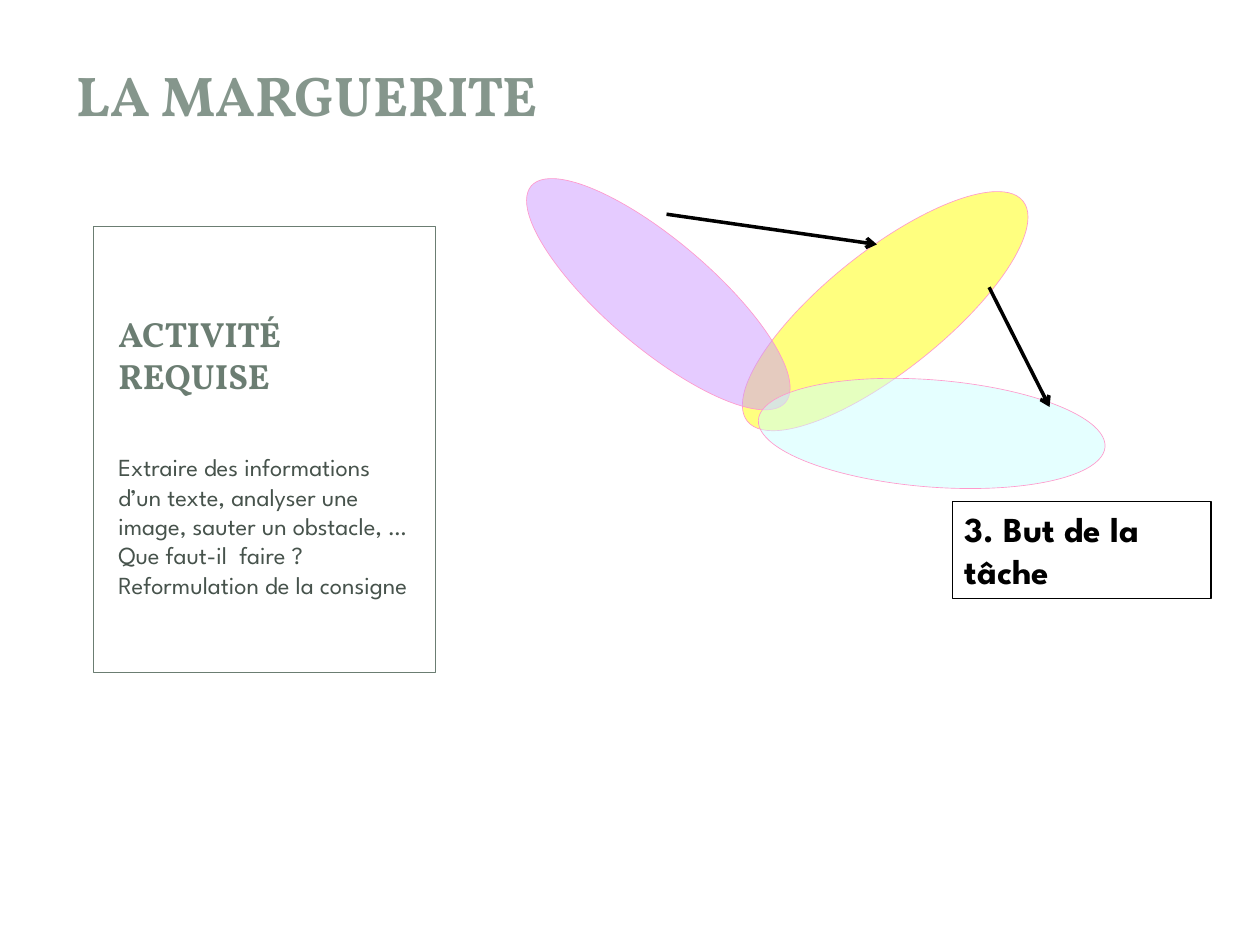
from dataclasses import dataclass

from lxml.etree import SubElement
from pptx import Presentation
from pptx.dml.color import RGBColor
from pptx.enum.shapes import MSO_CONNECTOR, MSO_SHAPE
from pptx.enum.text import MSO_ANCHOR, PP_ALIGN
from pptx.oxml.ns import qn
from pptx.shapes.autoshape import Shape
from pptx.util import Inches, Pt


@dataclass(frozen=True)
class Theme:
    serif: str = "Vollkorn"
    sans: str = "League Spartan"
    title: str = "85968C"
    head: str = "6B7D72"
    body: str = "47534C"
    black: str = "000000"
    white: str = "FFFFFF"
    rim: str = "FF99CC"
    big: int = 32
    mid: int = 20
    small: int = 14


@dataclass(frozen=True)
class Box:
    left: float
    top: float
    width: float
    height: float


@dataclass(frozen=True)
class Petal:
    box: Box
    turn: float
    fill: str


@dataclass(frozen=True)
class Arrow:
    start: tuple[float, float]
    end: tuple[float, float]


@dataclass(frozen=True)
class Style:
    font: str
    size: int
    color: str
    bold: bool = True
    lead: float | None = None


THEME = Theme()
PETALS = [
    Petal(Box(6.55, 1.07, 0.95, 2.8), 51.4, "FFFF00"),
    Petal(Box(4.8, 1.01, 0.85, 2.65), 310.4, "CC99FF"),
    Petal(Box(6.97, 2.06, 0.85, 2.76), 274.5, "CCFFFF"),
]
ARROWS = [
    Arrow((5.29, 1.7), (6.96, 1.94)),
    Arrow((7.85, 2.28), (8.33, 3.23)),
]


def place(box: Box) -> list[Inches]:
    return [Inches(n) for n in (box.left, box.top, box.width, box.height)]


def add_form(slide, kind: MSO_SHAPE, box: Box, line: str, width: float,
             fill: str | None = None) -> Shape:
    form = slide.shapes.add_shape(kind, *place(box))
    form.shadow.inherit = False
    if fill:
        form.fill.solid()
        form.fill.fore_color.rgb = RGBColor.from_string(fill)
    else:
        form.fill.background()
    form.line.color.rgb = RGBColor.from_string(line)
    form.line.width = Pt(width)
    return form


def write(form: Shape, text: str, style: Style,
          anchor: MSO_ANCHOR = MSO_ANCHOR.TOP) -> None:
    frame = form.text_frame
    frame.word_wrap = True
    frame.vertical_anchor = anchor
    para = frame.paragraphs[0]
    para.alignment = PP_ALIGN.LEFT
    if style.lead:
        para.line_spacing = Pt(style.lead)
    run = para.add_run()
    run.text = text
    run.font.name = style.font
    run.font.size = Pt(style.size)
    run.font.bold = style.bold
    run.font.color.rgb = RGBColor.from_string(style.color)


def add_text(slide, box: Box, text: str, style: Style,
             anchor: MSO_ANCHOR = MSO_ANCHOR.TOP) -> None:
    write(slide.shapes.add_textbox(*place(box)), text, style, anchor)


def add_petal(slide, petal: Petal) -> None:
    form = add_form(slide, MSO_SHAPE.OVAL, petal.box, THEME.rim, 0.37, petal.fill)
    form.rotation = petal.turn
    color = form.fill._xPr.find(qn("a:solidFill"))[0]
    SubElement(color, qn("a:alpha"), val="50000")


def add_arrow(slide, arrow: Arrow) -> None:
    ends = [Inches(n) for n in (*arrow.start, *arrow.end)]
    link = slide.shapes.add_connector(MSO_CONNECTOR.STRAIGHT, *ends)
    link.line.color.rgb = RGBColor.from_string(THEME.black)
    link.line.width = Pt(2)
    SubElement(link.line._get_or_add_ln(), qn("a:tailEnd"), type="arrow")
    SubElement(link._element.spPr, qn("a:effectLst"))


def main() -> None:
    deck = Presentation()
    deck.slide_width, deck.slide_height = Inches(10), Inches(7.5)
    slide = deck.slides.add_slide(deck.slide_layouts[6])

    # Card with the required activity
    add_form(slide, MSO_SHAPE.RECTANGLE, Box(0.74, 1.8, 2.72, 3.54),
             THEME.head, 0.5, THEME.white)
    add_text(slide, Box(0.84, 1.9, 2.51, 1.3), "ACTIVITÉ REQUISE",
             Style(THEME.serif, THEME.mid, THEME.head, lead=24), MSO_ANCHOR.BOTTOM)
    add_text(slide, Box(0.84, 3.54, 2.51, 1.63),
             "Extraire des informations d’un texte, analyser une image, "
             "sauter un obstacle, …Que faut-il  faire ? "
             "Reformulation de la consigne",
             Style(THEME.sans, THEME.small, THEME.body, bold=False, lead=16.8))

    # Label of the third petal
    label = add_form(slide, MSO_SHAPE.RECTANGLE, Box(7.56, 3.98, 2.05, 0.77),
                     THEME.black, 1)
    write(label, "3. But de la tâche",
          Style(THEME.sans, THEME.mid, THEME.black, lead=24))

    # Daisy petals
    for petal in PETALS:
        add_petal(slide, petal)

    # Slide title
    add_text(slide, Box(0.51, 0.43, 4.65, 0.64), "LA MARGUERITE",
             Style(THEME.serif, THEME.big, THEME.title))

    # Arrows from petal to petal
    for arrow in ARROWS:
        add_arrow(slide, arrow)

    deck.save("out.pptx")


if __name__ == "__main__":
    main()
